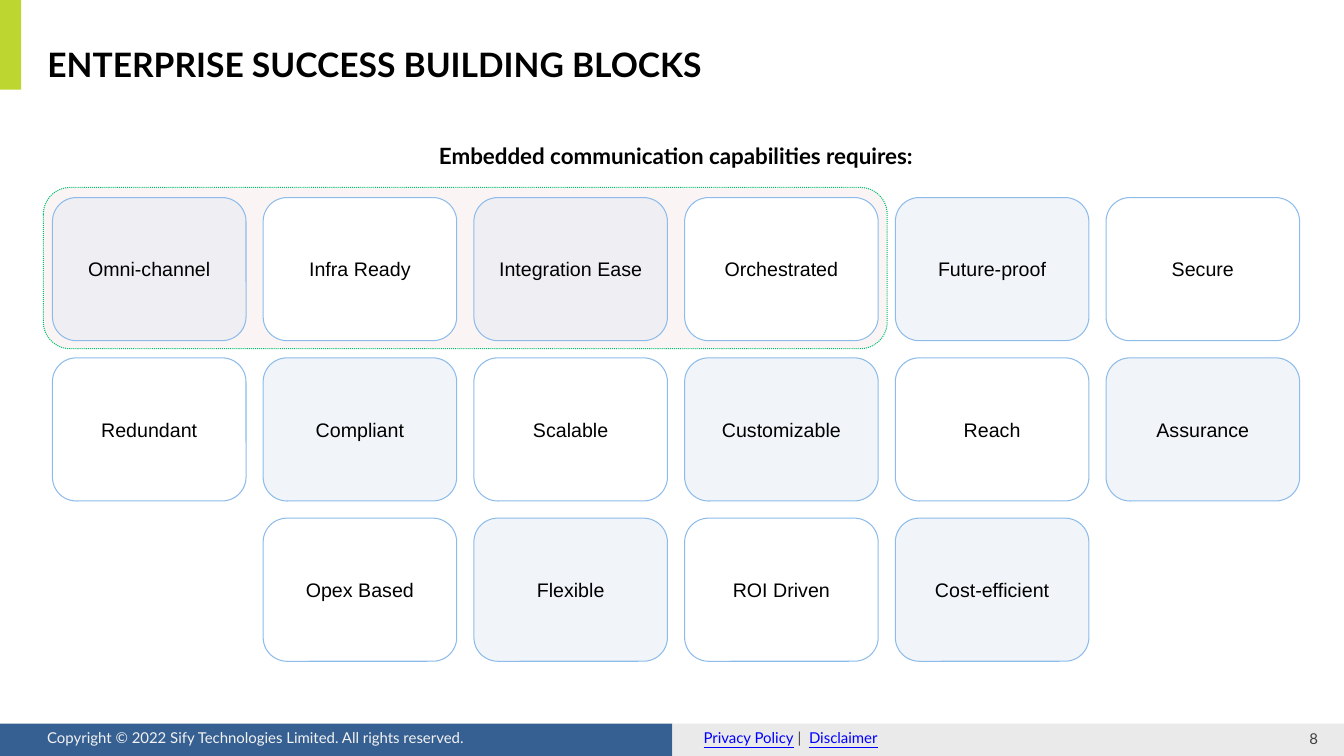
"""Build the slide of enterprise success building blocks."""
from dataclasses import dataclass

import lxml.etree
import pptx
import pptx.dml.color
import pptx.enum.dml
import pptx.enum.shapes
import pptx.enum.text
import pptx.oxml.ns
import pptx.util

Inches = pptx.util.Inches
Align = pptx.enum.text.PP_ALIGN
Anchor = pptx.enum.text.MSO_ANCHOR
Preset = pptx.enum.shapes.MSO_SHAPE


@dataclass(frozen=True)
class Box:
    left: float
    top: float
    width: float
    height: float

    def lengths(self) -> list:
        return [Inches(side) for side in (self.left, self.top, self.width, self.height)]


@dataclass(frozen=True)
class Panel:
    box: Box
    fill: str
    preset: int = Preset.RECTANGLE
    opacity: int = 100
    line: str = ""
    dotted: bool = False


@dataclass(frozen=True)
class Run:
    text: str
    size: float
    color: str = "000000"
    font: str = "Lato"
    bold: bool = False
    underline: bool = False


@dataclass(frozen=True)
class Label:
    box: Box
    runs: tuple
    align: int = Align.LEFT
    anchor: int = Anchor.TOP
    insets: tuple = (0.1, 0.05, 0.1, 0.05)


FOOTER_SIZE = 10.7
BARS = (
    Panel(Box(0, 7.18, 6.67, 0.32), "376092"),
    Panel(Box(6.67, 7.18, 6.67, 0.32), "EAEAEA"),
    Panel(Box(0, 0, 0.21, 0.89), "BED730"),
)
LABELS = (
    Label(Box(0.37, 7.18, 5.67, 0.28), (
        Run("Copyright © 2022 Sify Technologies Limited. All rights reserved.", FOOTER_SIZE, "F2F2F2"),
    )),
    Label(Box(6.88, 7.18, 4.41, 0.28), (
        Run("Privacy Policy", FOOTER_SIZE, "0000FF", underline=True),
        Run(" |  ", FOOTER_SIZE, "404040"),
        Run("Disclaimer", FOOTER_SIZE, "0000FF", underline=True),
    )),
    Label(Box(12.66, 7.22, 0.61, 0.21), (Run("8", FOOTER_SIZE, "404040"),),
          Align.CENTER, Anchor.MIDDLE, (0.13, 0.07, 0, 0.07)),
    Label(Box(4.04, 1.36, 5.33, 0.37), (
        Run("Embedded communication capabilities requires:", 16, bold=True),
    ), Align.CENTER),
)
TITLE = Label(Box(0.47, 0.39, 10.99, 0.5),
              (Run("ENTERPRISE SUCCESS BUILDING BLOCKS", 24, bold=True),),
              anchor=Anchor.MIDDLE, insets=(0, 0.05, 0.1, 0.05))
HIGHLIGHT = Panel(Box(0.43, 1.86, 8.37, 1.6), "F2DCDB", Preset.ROUNDED_RECTANGLE, 30, "00BF6F", True)

BLOCK_ROWS = (
    (0, ("Omni-channel", "Infra Ready", "Integration Ease", "Orchestrated", "Future-proof", "Secure")),
    (0, ("Redundant", "Compliant", "Scalable", "Customizable", "Reach", "Assurance")),
    (1, ("Opex Based", "Flexible", "ROI Driven", "Cost-efficient")),
)
GRID_LEFT, GRID_TOP = 0.52, 1.96
COLUMN_STEP, ROW_STEP = 2.09, 1.59
BLOCK_WIDTH, BLOCK_HEIGHT = 1.92, 1.42
BLOCK_INSETS = (0.13, 0.13, 0.13, 0.13)


def rgb(color: str) -> pptx.dml.color.RGBColor:
    return pptx.dml.color.RGBColor.from_string(color)


def write_label(shape, label: Label) -> None:
    frame = shape.text_frame
    frame.word_wrap = True
    frame.auto_size = pptx.enum.text.MSO_AUTO_SIZE.NONE
    frame.vertical_anchor = label.anchor
    (frame.margin_left, frame.margin_top,
     frame.margin_right, frame.margin_bottom) = [Inches(inset) for inset in label.insets]
    paragraph = frame.paragraphs[0]
    paragraph.alignment = label.align
    for part in label.runs:
        run = paragraph.add_run()
        run.text = part.text
        run.font.name = part.font
        run.font.size = pptx.util.Pt(part.size)
        run.font.bold = part.bold
        run.font.underline = part.underline
        run.font.color.rgb = rgb(part.color)


def add_panel(slide, panel: Panel):
    shape = slide.shapes.add_shape(panel.preset, *panel.box.lengths())
    shape.shadow.inherit = False
    shape.fill.solid()
    shape.fill.fore_color.rgb = rgb(panel.fill)
    if panel.opacity < 100:
        color = shape.fill._xPr.find(".//" + pptx.oxml.ns.qn("a:srgbClr"))
        alpha = lxml.etree.SubElement(color, pptx.oxml.ns.qn("a:alpha"))
        alpha.set("val", str(panel.opacity * 1000))
    if panel.line:
        shape.line.color.rgb = rgb(panel.line)
        shape.line.width = pptx.util.Pt(0.75)
        if panel.dotted:
            shape.line.dash_style = pptx.enum.dml.MSO_LINE.ROUND_DOT
    else:
        shape.line.fill.background()
    return shape


def add_label(slide, label: Label) -> None:
    write_label(slide.shapes.add_textbox(*label.box.lengths()), label)


def set_title(slide, label: Label) -> None:
    title = slide.shapes.title
    title.left, title.top, title.width, title.height = label.box.lengths()
    write_label(title, label)


def add_blocks(slide) -> None:
    for row, (first_column, names) in enumerate(BLOCK_ROWS):
        for column, name in enumerate(names, first_column):
            box = Box(GRID_LEFT + column * COLUMN_STEP, GRID_TOP + row * ROW_STEP,
                      BLOCK_WIDTH, BLOCK_HEIGHT)
            fill, opacity = ("FFFFFF", 100) if (row + column) % 2 else ("DCE6F2", 40)
            block = add_panel(slide, Panel(box, fill, Preset.ROUNDED_RECTANGLE, opacity, "8DBCEB"))
            write_label(block, Label(box, (Run(name, 14, font="Arial"),),
                                     Align.CENTER, Anchor.MIDDLE, BLOCK_INSETS))


def main() -> None:
    presentation = pptx.Presentation()
    presentation.slide_width = Inches(13.33)
    presentation.slide_height = Inches(7.5)
    slide = presentation.slides.add_slide(presentation.slide_layouts[5])
    for bar in BARS:
        add_panel(slide, bar)
    set_title(slide, TITLE)
    add_panel(slide, HIGHLIGHT)
    add_blocks(slide)
    for label in LABELS:
        add_label(slide, label)
    presentation.save("out.pptx")


if __name__ == "__main__":
    main()
